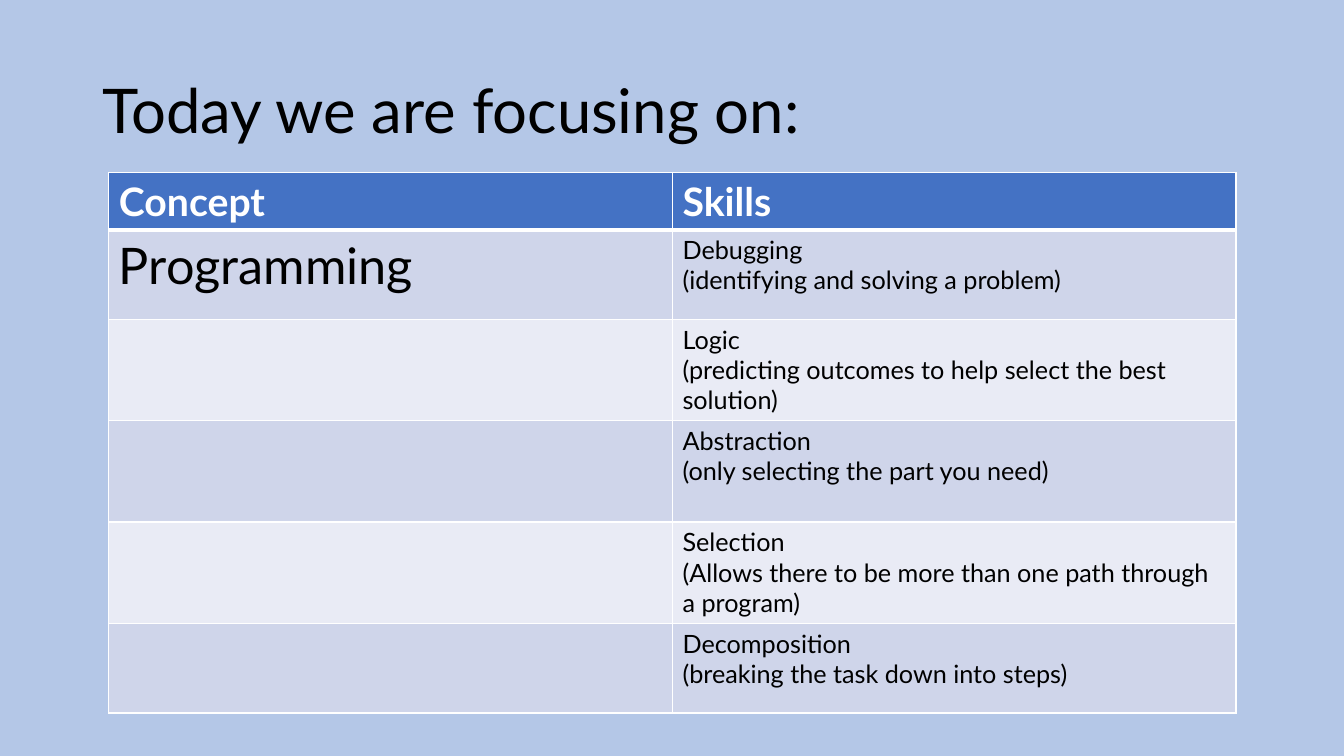
from dataclasses import dataclass

from lxml.etree import SubElement
from pptx import Presentation
from pptx.dml.color import RGBColor
from pptx.enum.text import MSO_ANCHOR
from pptx.oxml.ns import qn
from pptx.slide import Slide
from pptx.table import _Cell
from pptx.text.text import TextFrame
from pptx.util import Inches, Pt

SLIDE_WIDTH, SLIDE_HEIGHT = Inches(13.33), Inches(7.5)


@dataclass(frozen=True)
class Theme:
    font: str = "Lato"
    background: str = "B4C7E7"
    ink: str = "000000"
    white: str = "FFFFFF"
    header_fill: str = "4472C4"
    bands: tuple[str, str] = ("CFD5EA", "E9EBF5")
    title_size: int = 44
    header_size: int = 28
    concept_size: int = 36
    skill_size: int = 18
    thin: int = 1
    thick: int = 3


@dataclass(frozen=True)
class Box:
    """A frame in percent of the slide's width and height."""
    left: float
    top: float
    width: float
    height: float

    def frame(self) -> tuple[int, int, int, int]:
        return (across(self.left), down(self.top), across(self.width), down(self.height))


@dataclass(frozen=True)
class SkillRow:
    height: float
    skill: str
    meaning: str
    concept: str = ""


THEME = Theme()
TITLE_BOX = Box(6.9, 5.33, 86.27, 19.33)
TABLE_BOX = Box(8.1, 22.8, 83.87, 71.4)
HEADER_HEIGHT = 7.6
HEADINGS = ("Concept", "Skills")
SHORT_ROW, TALL_ROW = 11.87, 13.4
SKILLS = (
    SkillRow(SHORT_ROW, "Debugging", "(identifying and solving a problem)", "Programming"),
    SkillRow(TALL_ROW, "Logic", "(predicting outcomes to help select the best solution)"),
    SkillRow(TALL_ROW, "Abstraction", "(only selecting the part you need)"),
    SkillRow(TALL_ROW, "Selection", "(Allows there to be more than one path through a program)"),
    SkillRow(SHORT_ROW, "Decomposition", "(breaking the task down into steps)"),
)


def across(percent: float) -> int:
    return round(SLIDE_WIDTH * percent / 100)


def down(percent: float) -> int:
    return round(SLIDE_HEIGHT * percent / 100)


def write(frame: TextFrame, text: str, size: int, color: str, bold: bool = False) -> None:
    frame.text = text
    font_format = {"name": THEME.font, "size": Pt(size), "bold": bold}
    for paragraph in frame.paragraphs:
        for attribute, value in font_format.items():
            setattr(paragraph.font, attribute, value)
            for run in paragraph.runs:
                setattr(run.font, attribute, value)
        for run in paragraph.runs:
            run.font.color.rgb = RGBColor.from_string(color)


def paint_cell(cell: _Cell, fill: str, top: int, bottom: int) -> None:
    """Give the cell white borders, with top and bottom widths in points, and a fill."""
    properties = cell._tc.get_or_add_tcPr()
    widths = {"a:lnL": THEME.thin, "a:lnR": THEME.thin, "a:lnT": top, "a:lnB": bottom}
    for side, width in widths.items():
        border = SubElement(properties, qn(side), w=str(Pt(width)))
        SubElement(SubElement(border, qn("a:solidFill")), qn("a:srgbClr"), val=THEME.white)
    cell.fill.solid()
    cell.fill.fore_color.rgb = RGBColor.from_string(fill)


def add_title(slide: Slide) -> None:
    frame = slide.shapes.add_textbox(*TITLE_BOX.frame()).text_frame
    for attribute, value in {"word_wrap": True, "vertical_anchor": MSO_ANCHOR.MIDDLE}.items():
        setattr(frame, attribute, value)
    write(frame, "Today we are focusing on:", THEME.title_size, THEME.ink)
    frame.paragraphs[0].line_spacing = 0.9


def add_skills_table(slide: Slide) -> None:
    table = slide.shapes.add_table(len(SKILLS) + 1, len(HEADINGS), *TABLE_BOX.frame()).table
    table.rows[0].height = down(HEADER_HEIGHT)
    for column, heading in enumerate(HEADINGS):
        cell = table.cell(0, column)
        paint_cell(cell, THEME.header_fill, THEME.thin, THEME.thick)
        write(cell.text_frame, heading, THEME.header_size, THEME.white, bold=True)
    for index, entry in enumerate(SKILLS, start=1):
        table.rows[index].height = down(entry.height)
        concept, skill = table.cell(index, 0), table.cell(index, 1)
        top = THEME.thick if index == 1 else THEME.thin
        for cell in (concept, skill):
            paint_cell(cell, THEME.bands[(index - 1) % 2], top, THEME.thin)
        concept_size = THEME.concept_size if entry.concept else THEME.skill_size
        write(concept.text_frame, entry.concept, concept_size, THEME.ink)
        write(skill.text_frame, f"{entry.skill}\n{entry.meaning}", THEME.skill_size, THEME.ink)


def main() -> None:
    presentation = Presentation()
    presentation.slide_width, presentation.slide_height = SLIDE_WIDTH, SLIDE_HEIGHT
    slide = presentation.slides.add_slide(presentation.slide_layouts[6])
    slide.background.fill.solid()
    slide.background.fill.fore_color.rgb = RGBColor.from_string(THEME.background)
    add_title(slide)
    add_skills_table(slide)
    presentation.save("out.pptx")


if __name__ == "__main__":
    main()
